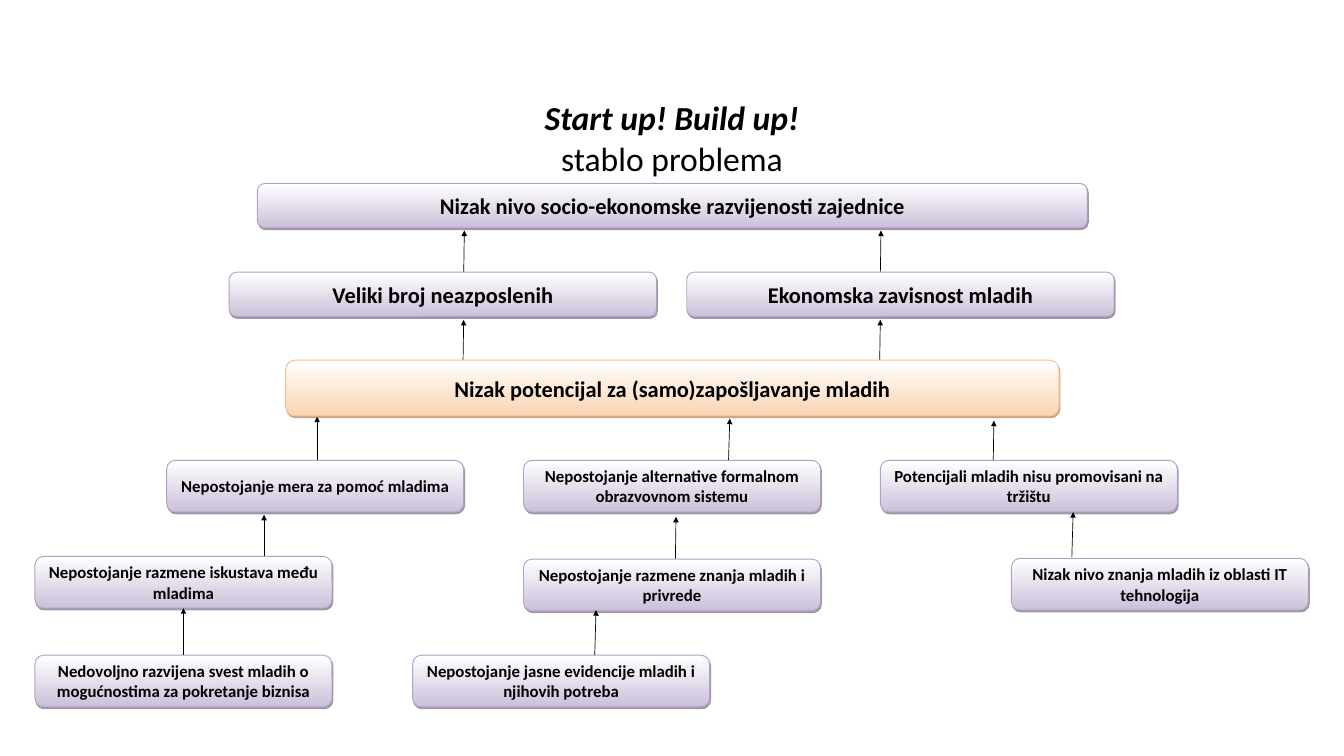
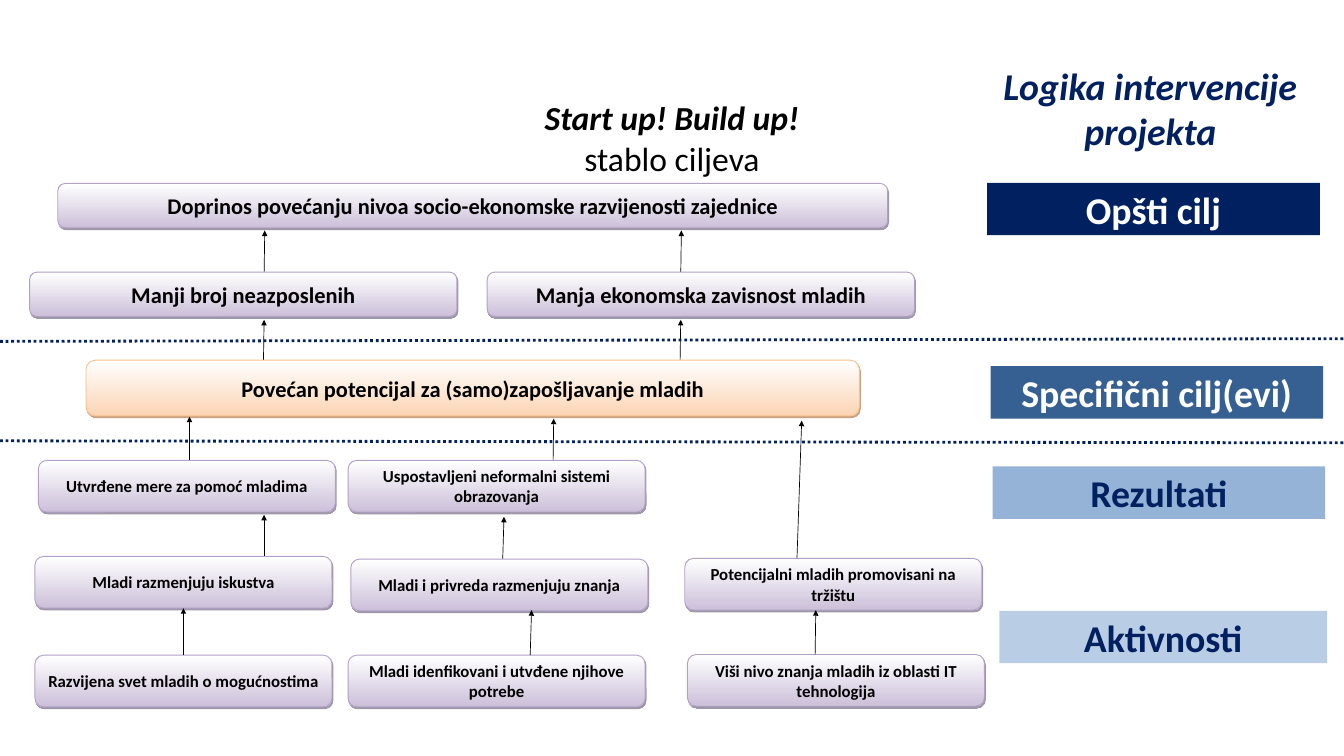
import lxml.etree
import pptx
import pptx.dml.color
import pptx.enum.dml
import pptx.enum.shapes
import pptx.enum.text
import pptx.oxml.ns
import pptx.util

PX = 9144
FONT = "Calibri"
COLORS = {
    "black": "000000",
    "white": "FFFFFF",
    "navy": "002060",
    "blue": "376092",
    "sky": "95B3D7",
    "pale": "B9CDE5",
    "lilac": "CCC0D9",
    "lilac_line": "B2A1C7",
    "lilac_shadow": "3F3151",
    "peach": "FBD4B4",
    "peach_line": "FABF8F",
    "peach_shadow": "974706",
}
CAUSE_SIZE = (442, 77)
EFFECT_SIZE = (636, 66)


def px(length):
    return pptx.util.Emu(length * PX)


def rgb(name):
    return pptx.dml.color.RGBColor.from_string(COLORS[name])


def add_element(parent, tag, **attributes):
    return lxml.etree.SubElement(parent, pptx.oxml.ns.qn(tag), attributes)


def write(frame, text, size=18, color="black", bold=True, italic=False):
    paragraph = frame.paragraphs[0]
    if paragraph.runs:
        paragraph = frame.add_paragraph()
    paragraph.alignment = pptx.enum.text.PP_ALIGN.CENTER
    run = paragraph.add_run()
    run.text = text
    run.font.name = FONT
    run.font.size = pptx.util.Pt(size)
    run.font.bold = bold
    run.font.italic = italic
    run.font.color.rgb = rgb(color)


class TreeBoard:
    def __init__(self, presentation):
        self.presentation = presentation
        self.slide = None

    def new_slide(self):
        self.slide = self.presentation.slides.add_slide(self.presentation.slide_layouts[6])

    def add_shape(self, kind, left, top, width, height):
        shape = self.slide.shapes.add_shape(kind, px(left), px(top), px(width), px(height))
        shape.shadow.inherit = False
        shape.text_frame.word_wrap = True
        shape.text_frame.vertical_anchor = pptx.enum.text.MSO_ANCHOR.MIDDLE
        return shape

    def box(self, left, top, size, text, font_size=18, tint="lilac"):
        shape = self.add_shape(pptx.enum.shapes.MSO_SHAPE.ROUNDED_RECTANGLE, left, top, *size)
        shape.fill.gradient()
        shape.fill.gradient_angle = 270
        for stop, color, position in zip(shape.fill.gradient_stops, ("white", tint), (0, 1)):
            stop.color.rgb = rgb(color)
            stop.position = position
        shape.line.color.rgb = rgb(tint + "_line")
        shape.line.width = pptx.util.Pt(1)
        effects = shape.element.spPr.find(pptx.oxml.ns.qn("a:effectLst"))
        shadow = add_element(effects, "a:outerShdw", blurRad="0", dist="27940",
                             dir="3780000", algn="ctr", rotWithShape="0")
        color = add_element(shadow, "a:srgbClr", val=COLORS[tint + "_shadow"])
        add_element(color, "a:alpha", val="50000")
        write(shape.text_frame, text, size=font_size)

    def level(self, left, top, width, text, fill, color):
        shape = self.add_shape(pptx.enum.shapes.MSO_SHAPE.RECTANGLE, left, top, width, 78)
        shape.fill.solid()
        shape.fill.fore_color.rgb = rgb(fill)
        shape.line.fill.background()
        shape.text_frame.auto_size = pptx.enum.text.MSO_AUTO_SIZE.SHAPE_TO_FIT_TEXT
        write(shape.text_frame, text, size=40.5, color=color)

    def line(self, start, end, color="black", width=0.75):
        connector = self.slide.shapes.add_connector(
            pptx.enum.shapes.MSO_CONNECTOR.STRAIGHT, *map(px, start + end))
        connector.line.color.rgb = rgb(color)
        connector.line.width = pptx.util.Pt(width)
        add_element(connector.element.spPr, "a:effectLst")
        return connector

    def arrow(self, start, end):
        connector = self.line(start, end)
        outline = connector.element.spPr.find(pptx.oxml.ns.qn("a:ln"))
        add_element(outline, "a:tailEnd", type="triangle")

    def arrows(self, ends):
        for start, end in ends:
            self.arrow(start, end)

    def divider(self, left_y, right_y):
        connector = self.line((0, left_y), (2000, right_y), color="navy", width=3)
        connector.line.dash_style = pptx.enum.dml.MSO_LINE.ROUND_DOT

    def text_box(self, left, top, width, height):
        frame = self.slide.shapes.add_textbox(px(left), px(top), px(width), px(height)).text_frame
        frame.word_wrap = True
        frame.auto_size = pptx.enum.text.MSO_AUTO_SIZE.SHAPE_TO_FIT_TEXT
        return frame

    def title(self, subtitle):
        frame = self.text_box(0, 140, 2000, 131)
        write(frame, "Start up! Build up!", size=36, italic=True)
        write(frame, subtitle, size=36, bold=False)

    def tree(self, subtitle, shift, crown, effects, core, causes, back_arrows, front_arrows):
        self.new_slide()
        for x in (690, 1310):
            self.arrow((x + shift, 410), (x + shift + 1, 343))
            self.arrow((x + shift - 1, 543), (x + shift, 476))
        self.arrows(back_arrows)
        for left, top, text in causes:
            self.box(left, top, CAUSE_SIZE, text)
        self.box(425 + shift, 536, (1151, 83), core, font_size=24, tint="peach")
        for left, text in zip((341, 1022), effects):
            self.box(left + shift, 405, EFFECT_SIZE, text, font_size=24)
        self.box(383 + shift, 273, (1235, 66), crown, font_size=24)
        self.title(subtitle)
        self.arrows(front_arrows)


def problem_tree(board):
    board.tree(
        "stablo problema",
        shift=0,
        crown="Nizak nivo socio-ekonomske razvijenosti zajednice",
        effects=("Veliki broj neazposlenih", "Ekonomska zavisnost mladih"),
        core="Nizak potencijal za (samo)zapošljavanje mladih",
        causes=[
            (52, 975, "Nedovoljno razvijena svest mladih o mogućnostima za pokretanje biznisa"),
            (614, 975, "Nepostojanje jasne evidencije mladih i njihovih potreba"),
            (248, 685, "Nepostojanje mera za pomoć mladima"),
            (1310, 685, "Potencijali mladih nisu promovisani na tržištu"),
            (779, 685, "Nepostojanje alternative formalnom obrazvovnom sistemu"),
            (52, 828, "Nepostojanje razmene iskustava među mladima"),
            (779, 832, "Nepostojanje razmene znanja mladih i privrede"),
            (1505, 831, "Nizak nivo znanja mladih iz oblasti IT tehnologija"),
        ],
        back_arrows=[
            ((1478, 692), (1479, 626)),
            ((472, 690), (472, 620)),
            ((1084, 690), (1086, 623)),
            ((393, 835), (393, 766)),
            ((1005, 835), (1006, 769)),
        ],
        front_arrows=[
            ((273, 975), (273, 905)),
            ((885, 975), (887, 908)),
            ((1595, 829), (1597, 762)),
        ],
    )


def goal_tree(board):
    board.tree(
        "stablo ciljeva",
        shift=-297,
        crown="Doprinos povećanju nivoa socio-ekonomske razvijenosti zajednice",
        effects=("Manji broj neazposlenih", "Manja ekonomska zavisnost mladih"),
        core="Povećan potencijal za (samo)zapošljavanje mladih",
        causes=[
            (52, 975, "Razvijena svet mladih o mogućnostima"),
            (518, 975, "Mladi idenfikovani i utvđene njihove potrebe"),
            (57, 685, "Utvrđene mere za pomoć mladima"),
            (1019, 831, "Potencijalni mladih promovisani na tržištu"),
            (518, 685, "Uspostavljeni neformalni sistemi obrazovanja"),
            (52, 828, "Mladi razmenjuju iskustva"),
            (522, 832, "Mladi i privreda razmenjuju znanja"),
            (1023, 974, "Viši nivo znanja mladih iz oblasti IT tehnologija"),
        ],
        back_arrows=[
            ((1186, 831), (1193, 626)),
            ((282, 690), (282, 620)),
            ((823, 690), (824, 623)),
            ((393, 835), (393, 766)),
            ((748, 835), (750, 769)),
        ],
        front_arrows=[
            ((273, 975), (273, 905)),
            ((789, 975), (791, 908)),
            ((1213, 974), (1214, 908)),
        ],
    )
    board.level(1474, 545, 495, "Specifični cilj(evi)", "blue", "white")
    board.level(1469, 272, 495, "Opšti cilj", "navy", "white")
    board.level(1477, 694, 495, "Rezultati", "sky", "navy")
    board.divider(508, 504)
    board.divider(656, 659)
    heading = board.text_box(1466, 88, 492, 146)
    for text in ("Logika intervencije", "projekta"):
        write(heading, text, size=40.5, color="navy", italic=True)
    board.level(1487, 909, 488, "Aktivnosti", "pale", "navy")


def main():
    presentation = pptx.Presentation()
    presentation.slide_width = px(2000)
    presentation.slide_height = px(1125)
    board = TreeBoard(presentation)
    problem_tree(board)
    goal_tree(board)
    presentation.save("out.pptx")


if __name__ == "__main__":
    main()
